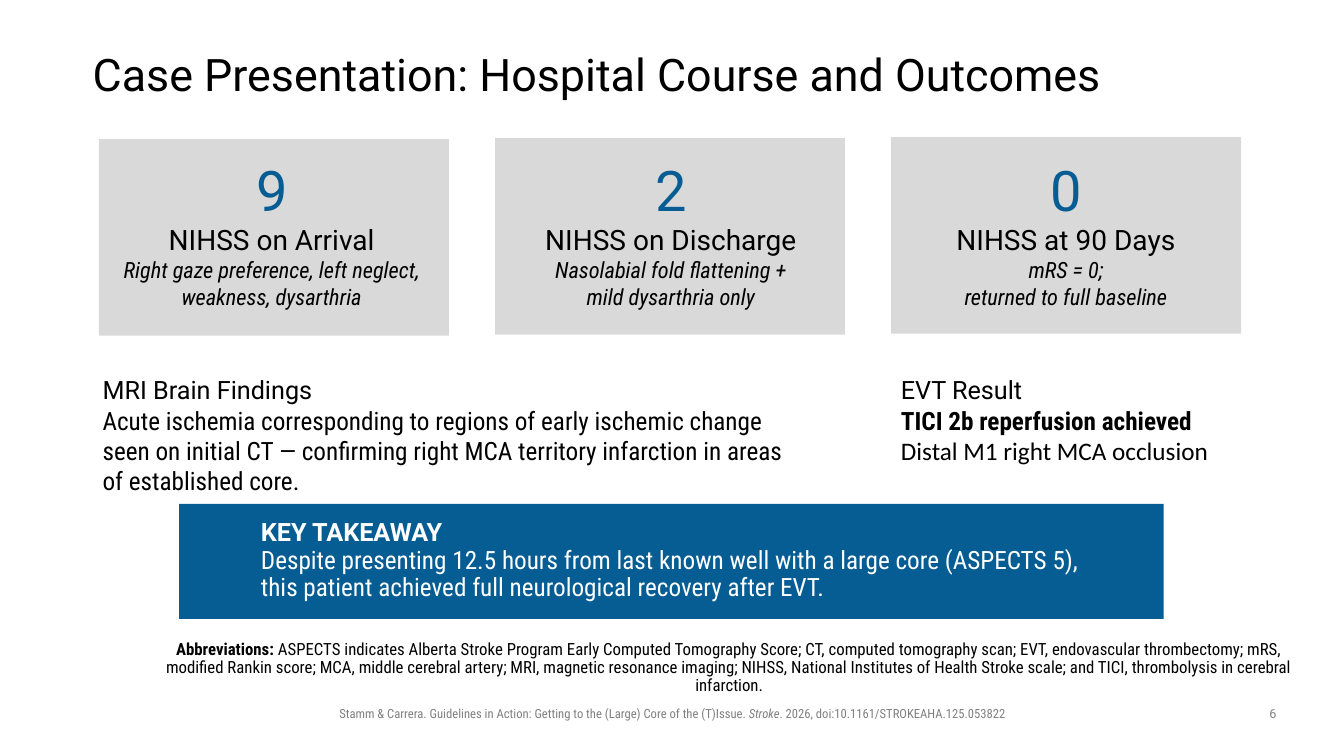
from copy import deepcopy

from pptx import Presentation
from pptx.dml.color import RGBColor
from pptx.enum.shapes import MSO_SHAPE
from pptx.enum.text import MSO_ANCHOR, MSO_AUTO_SIZE, PP_ALIGN
from pptx.oxml.ns import qn
from pptx.util import Pt

RECT = MSO_SHAPE.RECTANGLE
LEFT, CENTER = PP_ALIGN.LEFT, PP_ALIGN.CENTER
MIDDLE, BOTTOM = MSO_ANCHOR.MIDDLE, MSO_ANCHOR.BOTTOM
FIXED = MSO_AUTO_SIZE.NONE

BLACK = RGBColor(0x00, 0x00, 0x00)
WHITE = RGBColor(0xFF, 0xFF, 0xFF)
GRAY = RGBColor(0x80, 0x80, 0x80)
PALE = RGBColor(0xD9, 0xD9, 0xD9)
BLUE = RGBColor(0x06, 0x5D, 0x93)
BAND = RGBColor(0x05, 0x5D, 0x93)

ROBOTO, NARROW, PLAIN = "Roboto", "Roboto Condensed", "Calibri"

# Score, label, detail and left edge of the text
CARDS = [
    ("9", "NIHSS on Arrival",
     "Right gaze preference, left neglect, weakness, dysarthria", 75.6),
    ("2", "NIHSS on Discharge",
     "Nasolabial fold flattening +\vmild dysarthria only", 360.7),
    ("0", "NIHSS at 90 Days",
     "mRS = 0;\vreturned to full baseline", 642.9),
]


def place(shape, left, top, width, height):
    shape.left, shape.top = Pt(left), Pt(top)
    shape.width, shape.height = Pt(width), Pt(height)


def add_rect(slide, left, top, width, height, color):
    rect = slide.shapes.add_shape(
        RECT, Pt(left), Pt(top), Pt(width), Pt(height))
    rect.shadow.inherit = False
    rect.fill.solid()
    rect.fill.fore_color.rgb = color
    rect.line.fill.background()


def add_box(slide, left, top, width, height):
    box = slide.shapes.add_textbox(
        Pt(left), Pt(top), Pt(width), Pt(height))
    box.text_frame.word_wrap = True
    return box.text_frame


def style(par, face, size, color=BLACK, align=LEFT, space=1.0):
    par.alignment = align
    par.line_spacing = space
    for run in par.runs:
        run.font.name = face
        run.font.size = Pt(size)
        run.font.color.rgb = color
    # Line breaks take the size of the text around them
    for mark in par._p.findall(qn("a:br")):
        mark.insert(0, deepcopy(par.runs[0]._r.rPr))


def add_card(slide, index, score, label, detail, left):
    add_rect(slide, 70.6 + 283 * index, 99.4 - 0.7 * index, 250, 140.4, PALE)
    frame = add_box(slide, left, 107.3, 237, 118.8)
    frame.text = "\n".join((score, label))
    last = frame.add_paragraph()
    last.text = detail
    first, second = frame.paragraphs[:2]
    style(first, ROBOTO, 40, BLUE, CENTER)
    style(second, ROBOTO, 20, align=CENTER)
    style(last, NARROW, 16, align=CENTER)
    for run in last.runs:
        run.font.italic = True


def add_note(slide, left, top, width, height, head, text,
             color=BLACK, space=1.0):
    frame = add_box(slide, left, top, width, height)
    frame.text = head
    style(frame.paragraphs[0], ROBOTO, 18, color, space=0.9)
    par = frame.add_paragraph()
    par.text = text
    style(par, NARROW, 18, color, space=space)
    return frame


def add_title(slide):
    title = slide.shapes.title
    place(title, 66.2, 28.8, 828, 51.8)
    frame = title.text_frame
    frame.text = "Case Presentation: Hospital Course and Outcomes"
    frame.auto_size = FIXED
    frame.vertical_anchor = MIDDLE
    frame.margin_left = frame.margin_right = 0
    frame.margin_top = frame.margin_bottom = 0
    style(frame.paragraphs[0], ROBOTO, 32, space=0.9)


def add_terms(slide):
    body = slide.placeholders[1]
    place(body, 108, 454.3, 833, 46.1)
    frame = body.text_frame
    frame.auto_size = FIXED
    frame.vertical_anchor = BOTTOM
    frame.margin_left = 0
    frame.text = "Abbreviations:"
    par = frame.paragraphs[0]
    par.add_run().text = (
        " ASPECTS indicates Alberta Stroke Program Early Computed Tomography "
        "Score; CT, computed tomography scan; EVT, endovascular thrombectomy; "
        "mRS, modified Rankin score; MCA, middle cerebral artery; MRI, "
        "magnetic resonance imaging; NIHSS, National Institutes of Health "
        "Stroke scale; and TICI, thrombolysis in cerebral infarction.")
    props = par._p.get_or_add_pPr()
    props.set("marL", "0")
    props.set("indent", "0")
    props.append(props.makeelement(qn("a:buNone"), {}))
    style(par, NARROW, 12, align=CENTER, space=0.9)
    par.space_before = Pt(0)
    par.runs[0].font.bold = True


def add_foot(slide):
    frame = add_box(slide, 169.9, 500.4, 620.6, 18)
    par = frame.paragraphs[0]
    par.text = ("Stamm & Carrera. Guidelines in Action: Getting to the "
                "(Large) Core of the (T)Issue. ")
    for text in ("Stroke", ". 2026, doi:10.1161/STROKEAHA.125.053822"):
        par.add_run().text = text
    style(par, NARROW, 9, GRAY, CENTER)
    par.runs[1].font.italic = True

    frame = add_box(slide, 894.2, 500.4, 30.2, 18.7)
    frame.text = "6"
    style(frame.paragraphs[0], ROBOTO, 9, GRAY, CENTER)


def main():
    deck = Presentation()
    deck.slide_width, deck.slide_height = Pt(960), Pt(540)
    slide = deck.slides.add_slide(deck.slide_layouts[1])
    add_title(slide)

    # Score cards
    for index, card in enumerate(CARDS):
        add_card(slide, index, *card)

    # Findings and result
    add_note(slide, 66.2, 266.4, 531.4, 92.2, "MRI Brain Findings",
             "Acute ischemia corresponding to regions of early ischemic change"
             "\vseen on initial CT — confirming right MCA territory infarction "
             "in areas\vof established core.")
    frame = add_note(slide, 636.5, 266.4, 263.5, 70.6, "EVT Result",
                     "TICI 2b reperfusion achieved"
                     "\vDistal M1 right MCA occlusion")
    grade, site = frame.paragraphs[1].runs
    grade.font.bold = True
    site.font.name = PLAIN

    # Takeaway band
    add_rect(slide, 127.9, 360, 703.4, 82.1, BAND)
    frame = add_note(slide, 179.3, 367.9, 601.2, 66.2, "KEY TAKEAWAY",
                     "Despite presenting 12.5 hours from last known well with "
                     "a large core (ASPECTS 5), this patient achieved full "
                     "neurological recovery after EVT.", WHITE, 0.9)
    frame.paragraphs[0].runs[0].font.bold = True

    add_terms(slide)
    add_foot(slide)
    deck.save("out.pptx")


if __name__ == "__main__":
    main()
